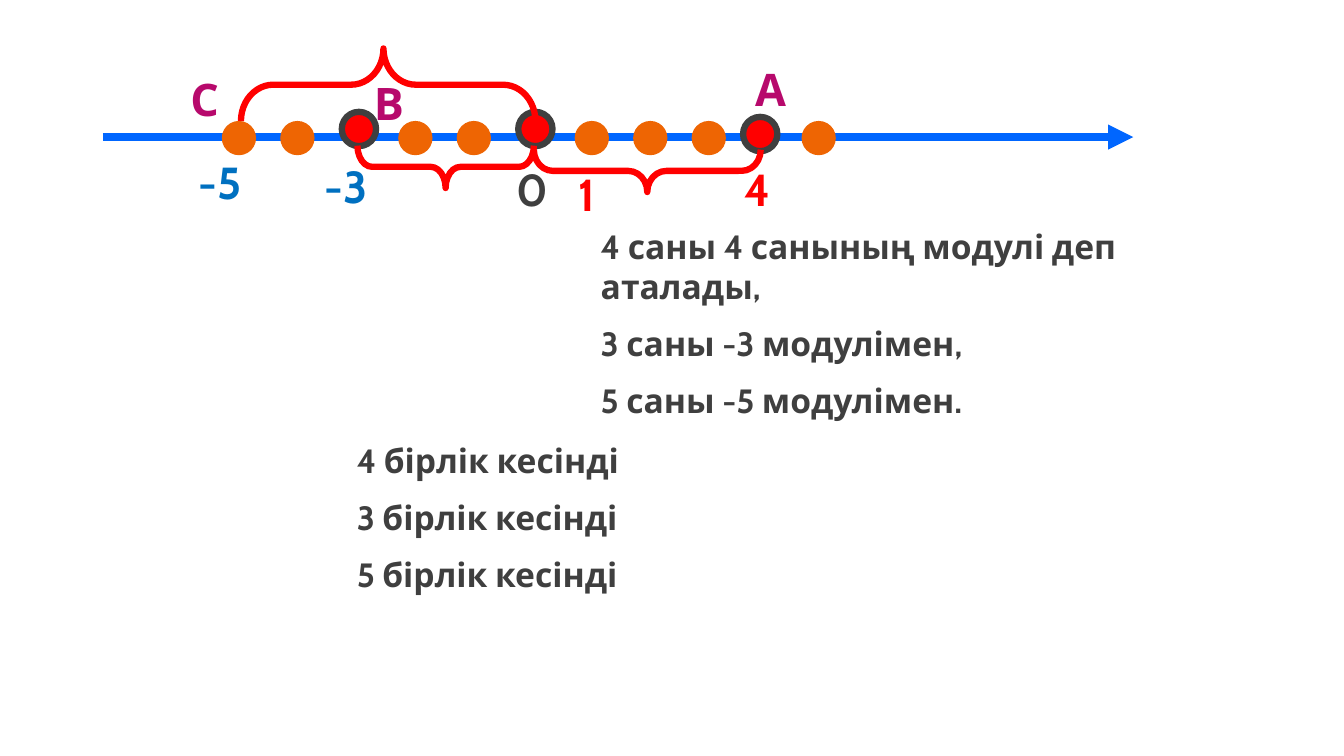
from pptx import Presentation
from pptx.dml.color import RGBColor
from pptx.enum.shapes import MSO_CONNECTOR, MSO_SHAPE
from pptx.enum.text import MSO_AUTO_SIZE
from pptx.oxml.ns import qn
from pptx.util import Inches, Pt
from lxml import etree

ELLIPSE, BRACE = MSO_SHAPE.OVAL, MSO_SHAPE.LEFT_BRACE
STRAIGHT = MSO_CONNECTOR.STRAIGHT
GROW = MSO_AUTO_SIZE.SHAPE_TO_FIT_TEXT

COLORS = {"axis": "0066FF", "dot": "EE6503", "red": "FF0000",
          "dark": "3F3F3F", "purple": "B7096C", "blue": "0070C0"}
FONT = "Cabin"

STATEMENTS = [
    ((3.44, 4.31, 4.55, 1.72),
     ["4 бірлік кесінді", "3 бірлік кесінді", "5 бірлік кесінді"]),
    ((5.86, 2.19, 6.61, 2.12),
     ["4 саны 4 санының модулі деп аталады,",
      "3 саны -3 модулімен,", "5 саны -5 модулімен."]),
]
AXIS = (1.02, 11.24, 1.36)
DOT_SIZE, DOT_TOP = 0.34, 1.2
DOT_LEFTS = [2.2, 2.78, 3.95, 4.53, 5.7, 6.28, 6.86, 7.95]
MARKED_POINTS = [(3.39, 1.11), (5.14, 1.11), (7.37, 1.16)]
LABELS = [
    ("0", 5.02, 1.56, 0.67, "dark"),
    ("1", 5.64, 1.61, 0.67, "red"),
    ("А", 7.39, 0.56, 0.67, "purple"),
    ("В", 3.61, 0.7, 0.67, "purple"),
    ("4", 7.29, 1.56, 0.67, "red"),
    ("-3", 3.12, 1.53, 0.83, "blue"),
    ("С", 1.79, 0.66, 0.67, "purple"),
    ("-5", 1.87, 1.49, 0.83, "blue"),
]
BRACES = [
    ((6.21, 0.57, 0.42, 2.25), 270, False, (0.45, 0.5)),
    ((4.21, 0.78, 0.42, 1.75), 270, False, (0.35, 0.5)),
    ((3.49, -0.62, 0.72, 2.92), 90, True, (0.445, 0.484)),
]


def rgb(name):
    return RGBColor.from_string(COLORS[name])


def add_text(slide, box, lines, size, color):
    tb = slide.shapes.add_textbox(*map(Inches, box))
    tf = tb.text_frame
    tf.word_wrap = True
    tf.auto_size = GROW
    for i, line in enumerate(lines):
        p = tf.paragraphs[0] if i == 0 else tf.add_paragraph()
        if i:
            p.space_before = Pt(size / 2)
        r = p.add_run()
        r.text = line
        for key, value in {"name": FONT, "size": Pt(size), "bold": True}.items():
            setattr(r.font, key, value)
        r.font.color.rgb = rgb(color)


def add_shape(slide, kind, box, fill=None, line=None):
    sp = slide.shapes.add_shape(kind, *map(Inches, box))
    sp.shadow.inherit = False
    if fill:
        sp.fill.solid()
        sp.fill.fore_color.rgb = rgb(fill)
    else:
        sp.fill.background()
    if line:
        sp.line.color.rgb = rgb(line)
        sp.line.width = Pt(4.5)
    else:
        sp.line.fill.background()
    return sp


def add_axis(slide):
    x1, x2, y = map(Inches, AXIS)
    cx = slide.shapes.add_connector(STRAIGHT, x1, y, x2, y)
    cx.line.color.rgb = rgb("axis")
    cx.line.width = Pt(6)
    etree.SubElement(cx.line._get_or_add_ln(), qn("a:tailEnd"), type="triangle")
    etree.SubElement(cx._element.spPr, qn("a:effectLst"))


def main():
    prs = Presentation()
    prs.slide_width, prs.slide_height = Inches(13.33), Inches(7.5)
    s = prs.slides.add_slide(prs.slide_layouts[6])

    for box, lines in STATEMENTS:
        add_text(s, box, lines, 24, "dark")
    add_axis(s)
    for left in DOT_LEFTS:
        add_shape(s, ELLIPSE, (left, DOT_TOP, DOT_SIZE, DOT_SIZE), "dot")
    for left, top in MARKED_POINTS:
        add_shape(s, ELLIPSE, (left, top, DOT_SIZE, DOT_SIZE), "red", "dark")
    for text, left, top, width, color in LABELS:
        add_text(s, (left, top, width, 0.63), [text], 32, color)
    for box, rotation, flipped, adjustments in BRACES:
        sp = add_shape(s, BRACE, box, line="red")
        sp.rotation = rotation
        for i, value in enumerate(adjustments):
            sp.adjustments[i] = value
        if flipped:
            sp._element.spPr.get_or_add_xfrm().set("flipV", "1")

    prs.save("out.pptx")


if __name__ == "__main__":
    main()
